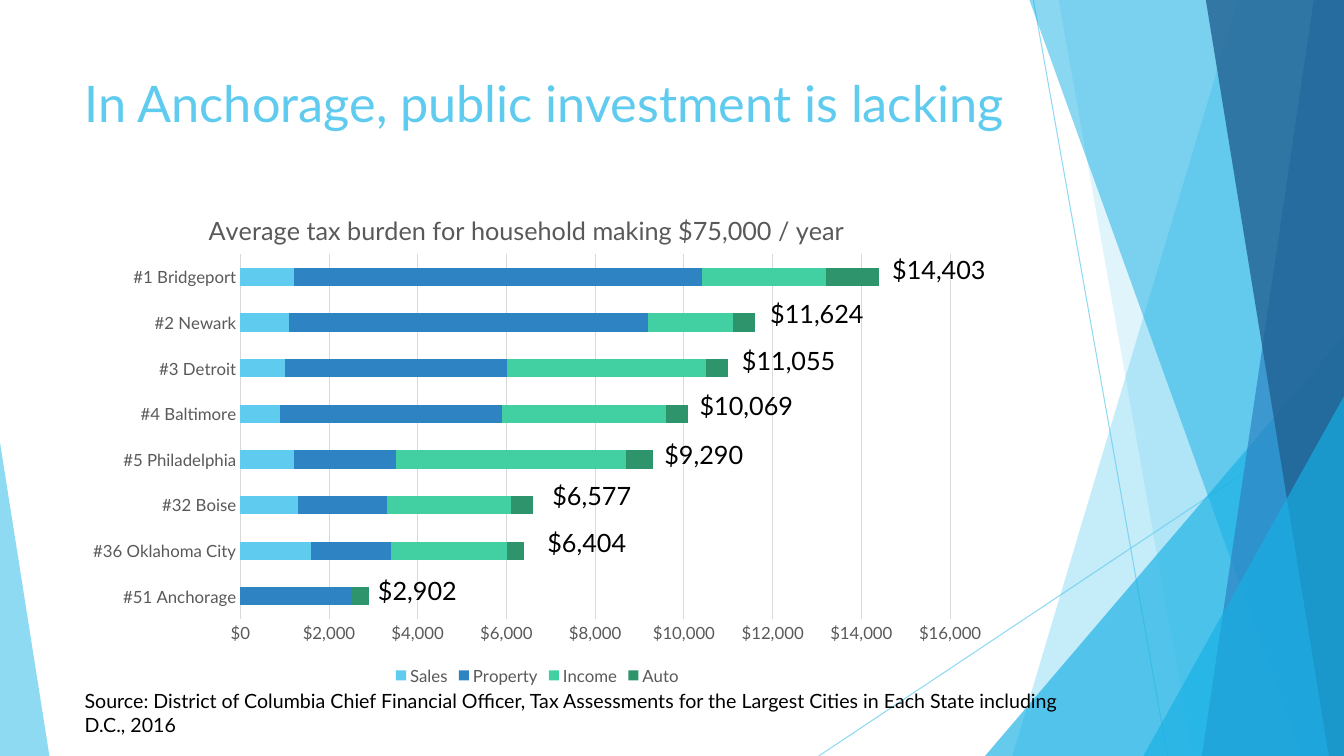
"""Build the Anchorage tax burden slide."""
from lxml import etree
from pptx import Presentation
from pptx.chart.data import CategoryChartData
from pptx.dml.color import RGBColor
from pptx.enum.chart import XL_CHART_TYPE, XL_LEGEND_POSITION, XL_TICK_MARK
from pptx.enum.shapes import MSO_CONNECTOR, MSO_SHAPE
from pptx.enum.text import MSO_ANCHOR, PP_ALIGN
from pptx.oxml.ns import qn
from pptx.util import Inches, Pt

STACKED = XL_CHART_TYPE.BAR_STACKED
BOTTOM = XL_LEGEND_POSITION.BOTTOM
NO_TICK = XL_TICK_MARK.NONE
STRAIGHT = MSO_CONNECTOR.STRAIGHT
TRIANGLE = MSO_SHAPE.ISOSCELES_TRIANGLE
TOP = MSO_ANCHOR.TOP
LEFT = PP_ALIGN.LEFT

WIDTH, HEIGHT = 13.33, 7.5
FONT = "Lato"
SKY, CYAN, BLUE, NAVY = "5FCBEF", "17B0E4", "2E83C3", "226292"
GREY, GRID, BLACK = "595959", "D9D9D9", "000000"

TITLE = "In Anchorage, public investment is lacking"
CHART_TITLE = "Average tax burden for household making $75,000 / year"
SOURCE = ("Source: District of Columbia Chief Financial Officer, Tax Assessments "
          "for the Largest Cities in Each State including D.C., 2016")
CITIES = ["#51 Anchorage", "#36 Oklahoma City", "#32 Boise", "#5 Philadelphia",
          "#4 Baltimore", "#3 Detroit", "#2 Newark", "#1 Bridgeport"]
TAXES = [
    ("Sales", SKY, [0, 1600, 1300, 1200, 900, 1000, 1100, 1200]),
    ("Property", BLUE, [2500, 1800, 2000, 2300, 5000, 5000, 8100, 9200]),
    ("Income", "42D0A2", [0, 2600, 2800, 5200, 3700, 4500, 1900, 2800]),
    ("Auto", "2E946B", [400, 400, 500, 600, 500, 500, 500, 1200]),
]
TOTALS = [
    ("$14,403", 8.75, 2.47), ("$11,624", 7.54, 2.91), ("$11,055", 7.26, 3.38),
    ("$10,069", 6.84, 3.82), ("$9,290", 6.49, 4.31), ("$6,577", 5.38, 4.72),
    ("$6,404", 5.33, 5.18), ("$2,902", 3.65, 5.66),
]
RAYS = [((10.25, 0), (11.58, HEIGHT)), ((WIDTH, 4.03), (8.12, HEIGHT))]
BAND, WEDGE = "band", "wedge"
FACETS = [
    (BAND, (12.28, 10.04), SKY, 36),
    (BAND, (10.5, 11.83), SKY, 20),
    (WEDGE, (9.77, 3.33, 3.56, 1), CYAN, 66),
    (BAND, (10.21, 12.91), CYAN, 50),
    (BAND, (13.03, 11.92), BLUE, 70),
    (BAND, (11.96, 13.18), NAVY, 80),
    (WEDGE, (11.34, 3.93, 1.99, 1), CYAN, 66),
    (WEDGE, (0, 4.39, 0.49, 0), SKY, 70),
]


def paint(color_format, color):
    color_format.rgb = RGBColor.from_string(color)


def fade(shape, percent):
    color = next(shape._element.spPr.iter(qn("a:srgbClr")))
    etree.SubElement(color, qn("a:alpha")).set("val", str(percent * 1000))


def style(font, size, color):
    font.name, font.size, font.bold = FONT, Pt(size), False
    paint(font.color, color)


def write(box, text, size, color):
    frame = box.text_frame
    frame.word_wrap = True
    frame.vertical_anchor = TOP
    frame.text = text
    para = frame.paragraphs[0]
    para.alignment = LEFT
    style(para.runs[0].font, size, color)


def add_text(page, text, size, bounds):
    box = page.shapes.add_textbox(*map(Inches, bounds))
    write(box, text, size, BLACK)


def add_ray(page, start, end):
    ray = page.shapes.add_connector(STRAIGHT, *map(Inches, start + end))
    paint(ray.line.color, SKY)
    ray.line.width = Pt(0.75)
    fade(ray, 70)
    etree.SubElement(ray._element.spPr, qn("a:effectLst"))


def add_facet(page, kind, geometry, color, opacity):
    if kind == BAND:
        top_x, bottom_x = geometry
        builder = page.shapes.build_freeform(Inches(top_x), 0)
        corners = [(WIDTH, 0), (WIDTH, HEIGHT), (bottom_x, HEIGHT)]
        builder.add_line_segments([(Inches(x), Inches(y)) for x, y in corners])
        facet = builder.convert_to_shape()
    else:
        left, top, width, peak = geometry
        bounds = (left, top, width, HEIGHT - top)
        facet = page.shapes.add_shape(TRIANGLE, *map(Inches, bounds))
        facet.adjustments[0] = peak
    facet.shadow.inherit = False
    facet.fill.solid()
    paint(facet.fill.fore_color, color)
    fade(facet, opacity)
    facet.line.fill.background()


def set_layout(parent, index, settings):
    for old in parent.findall(qn("c:layout")):
        parent.remove(old)
    layout = etree.Element(qn("c:layout"))
    manual = etree.SubElement(layout, qn("c:manualLayout"))
    for name, value in settings:
        etree.SubElement(manual, qn("c:" + name)).set("val", str(value))
    parent.insert(index, layout)


def add_tax_chart(page):
    data = CategoryChartData(number_format='"$"#,##0')
    data.categories = CITIES
    for name, _, values in TAXES:
        data.add_series(name, values)
    bounds = map(Inches, (0.74, 1.86, 9.18, 4.98))
    chart = page.shapes.add_chart(STACKED, *bounds, data).chart
    style(chart.font, 12, GREY)

    heading = chart.chart_title
    heading.text_frame.text = CHART_TITLE
    style(heading.text_frame.paragraphs[0].runs[0].font, 18, GREY)
    edges = [("xMode", "edge"), ("yMode", "edge")]
    set_layout(heading._element, 1, edges + [("x", 0.14), ("y", 0.04)])
    inner = [("layoutTarget", "inner")] + edges
    frame = [("x", 0.179), ("y", 0.133), ("w", 0.767), ("h", 0.727)]
    set_layout(chart._chartSpace.chart.plotArea, 0, inner + frame)

    plot = chart.plots[0]
    plot.gap_width, plot.overlap = 150, 100
    for series, (_, color, _) in zip(plot.series, TAXES):
        series.format.fill.solid()
        paint(series.format.fill.fore_color, color)

    cities, dollars = chart.category_axis, chart.value_axis
    for axis in (cities, dollars):
        axis.major_tick_mark = axis.minor_tick_mark = NO_TICK
        style(axis.tick_labels.font, 12, GREY)
    dollars.minimum_scale, dollars.maximum_scale = 0, 16000
    dollars.major_unit = 2000
    dollars.tick_labels.number_format = '"$"#,##0'
    dollars.tick_labels.number_format_is_linked = False
    dollars.format.line.fill.background()
    for line in (cities.format.line, dollars.major_gridlines.format.line):
        paint(line.color, GRID)
        line.width = Pt(0.75)

    chart.has_legend = True
    chart.legend.position = BOTTOM
    chart.legend.include_in_layout = False
    style(chart.legend.font, 12, GREY)


def main():
    deck = Presentation()
    deck.slide_width, deck.slide_height = Inches(WIDTH), Inches(HEIGHT)
    page = deck.slides.add_slide(deck.slide_layouts[5])
    for start, end in RAYS:
        add_ray(page, start, end)
    for facet in FACETS:
        add_facet(page, *facet)

    title = page.shapes.title
    title.left, title.top = Inches(0.74), Inches(0.67)
    title.width, title.height = Inches(9.84), Inches(1.44)
    write(title, TITLE, 36, SKY)

    add_tax_chart(page)
    add_text(page, SOURCE, 14, (0.74, 6.79, 9.96, 0.57))
    for total, left, top in TOTALS:
        add_text(page, total, 18, (left, top, 1.49, 0.4))
    deck.save("out.pptx")


if __name__ == "__main__":
    main()
